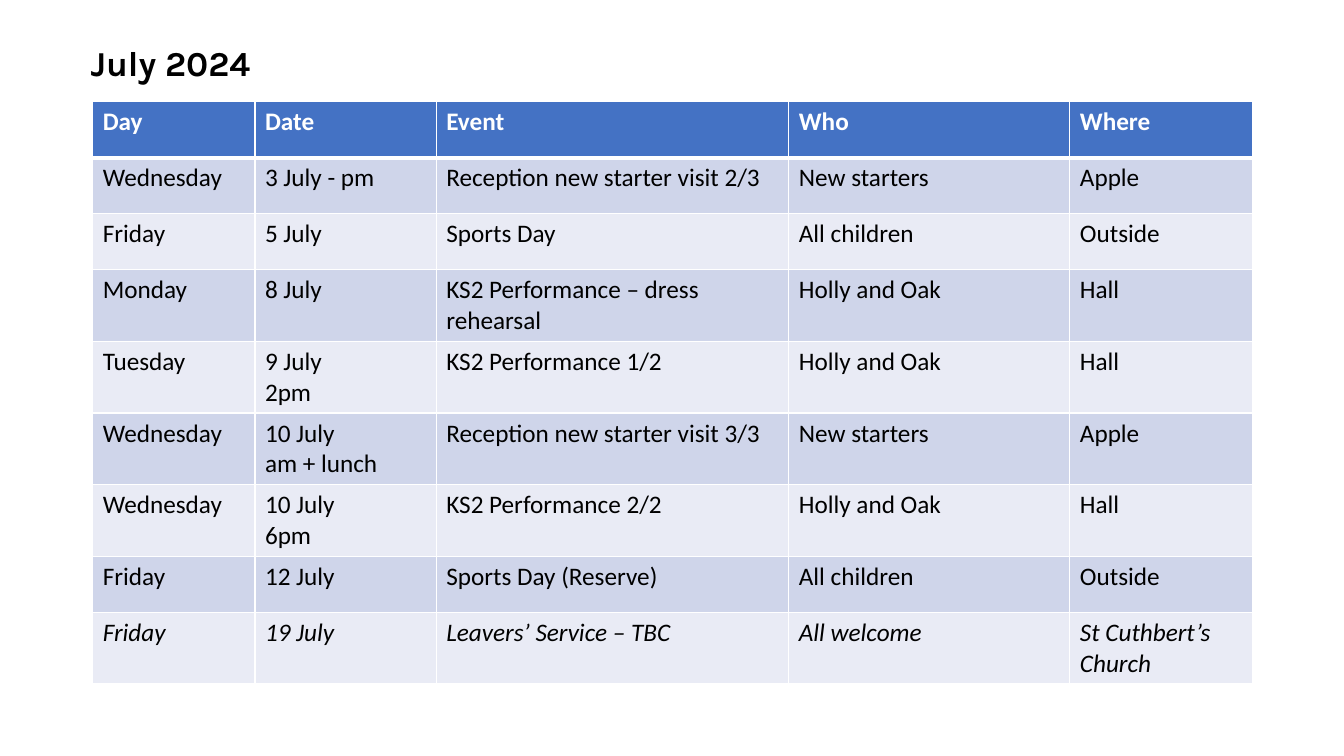
from lxml import etree
from pptx import Presentation
from pptx.dml.color import RGBColor
from pptx.enum.text import MSO_AUTO_SIZE
from pptx.oxml.ns import qn
from pptx.util import Inches, Pt

FIT = MSO_AUTO_SIZE.SHAPE_TO_FIT_TEXT
COLORS = {"head": "4472C4", "odd": "CFD5EA", "even": "E9EBF5",
          "ink": "000000", "white": "FFFFFF"}
TITLE = {"name": "Karla", "size": Pt(25), "bold": True}
HEAD = {"name": "Calibri", "size": Pt(18), "bold": True}
BODY = {**HEAD, "bold": False}
DRAFT = {**BODY, "italic": True}

WIDTHS = [1.61, 1.8, 3.5, 2.79, 1.81]
EVENTS = [
    ["Day", "Date", "Event", "Who", "Where"],
    ["Wednesday", "3 July - pm", "Reception new starter visit 2/3", "New starters", "Apple"],
    ["Friday", "5 July", "Sports Day", "All children", "Outside"],
    ["Monday", "8 July", "KS2 Performance – dress rehearsal", "Holly and Oak", "Hall"],
    ["Tuesday", "9 July\n2pm", "KS2 Performance 1/2", "Holly and Oak", "Hall"],
    ["Wednesday", "10 July\nam + lunch", "Reception new starter visit 3/3", "New starters", "Apple"],
    ["Wednesday", "10 July\n6pm", "KS2 Performance 2/2", "Holly and Oak", "Hall"],
    ["Friday", "12 July", "Sports Day (Reserve)", "All children", "Outside"],
    ["Friday", "19 July", "Leavers’ Service – TBC", "All welcome", "St Cuthbert’s Church"],
]


def style(frame, looks, color):
    for para in frame.paragraphs:
        for run in para.runs:
            for key, value in looks.items():
                setattr(run.font, key, value)
            run.font.color.rgb = RGBColor.from_string(COLORS[color])


def border(cell, row):
    wide = {0: "lnB", 1: "lnT"}.get(row)
    props = cell._tc.get_or_add_tcPr()
    for side in ("lnL", "lnR", "lnT", "lnB"):
        line = etree.SubElement(props, qn("a:" + side))
        line.set("w", str(Pt(3 if side == wide else 1)))
        fill = etree.SubElement(line, qn("a:solidFill"))
        etree.SubElement(fill, qn("a:srgbClr")).set("val", COLORS["white"])


def add_title(slide, left, top, width, height):
    box = slide.shapes.add_textbox(*map(Inches, (left, top, width, height)))
    frame = box.text_frame
    frame.word_wrap = True
    frame.auto_size = FIT
    frame.text = "July 2024"
    style(frame, TITLE, "ink")


def add_events(slide, left, top, width, height):
    count = len(EVENTS)
    table = slide.shapes.add_table(
        count, len(WIDTHS), *map(Inches, (left, top, width, height))).table
    for col, size in zip(table.columns, WIDTHS):
        col.width = Inches(width * size / sum(WIDTHS))
    for row, texts in enumerate(EVENTS):
        table.rows[row].height = Inches(height / count)
        band = "head" if row == 0 else "odd" if row % 2 else "even"
        looks = HEAD if row == 0 else DRAFT if row == count - 1 else BODY
        for col, text in enumerate(texts):
            cell = table.cell(row, col)
            cell.text = text
            style(cell.text_frame, looks, "ink" if row else "white")
            border(cell, row)
            cell.fill.solid()
            cell.fill.fore_color.rgb = RGBColor.from_string(COLORS[band])


def main():
    deck = Presentation()
    deck.slide_width = Inches(13.33)
    deck.slide_height = Inches(7.5)
    slide = deck.slides.add_slide(deck.slide_layouts[6])
    add_events(slide, 0.92, 1.01, 11.5, 5.0)
    add_title(slide, 0.8, 0.36, 4.45, 0.52)
    deck.save("out.pptx")


if __name__ == "__main__":
    main()
